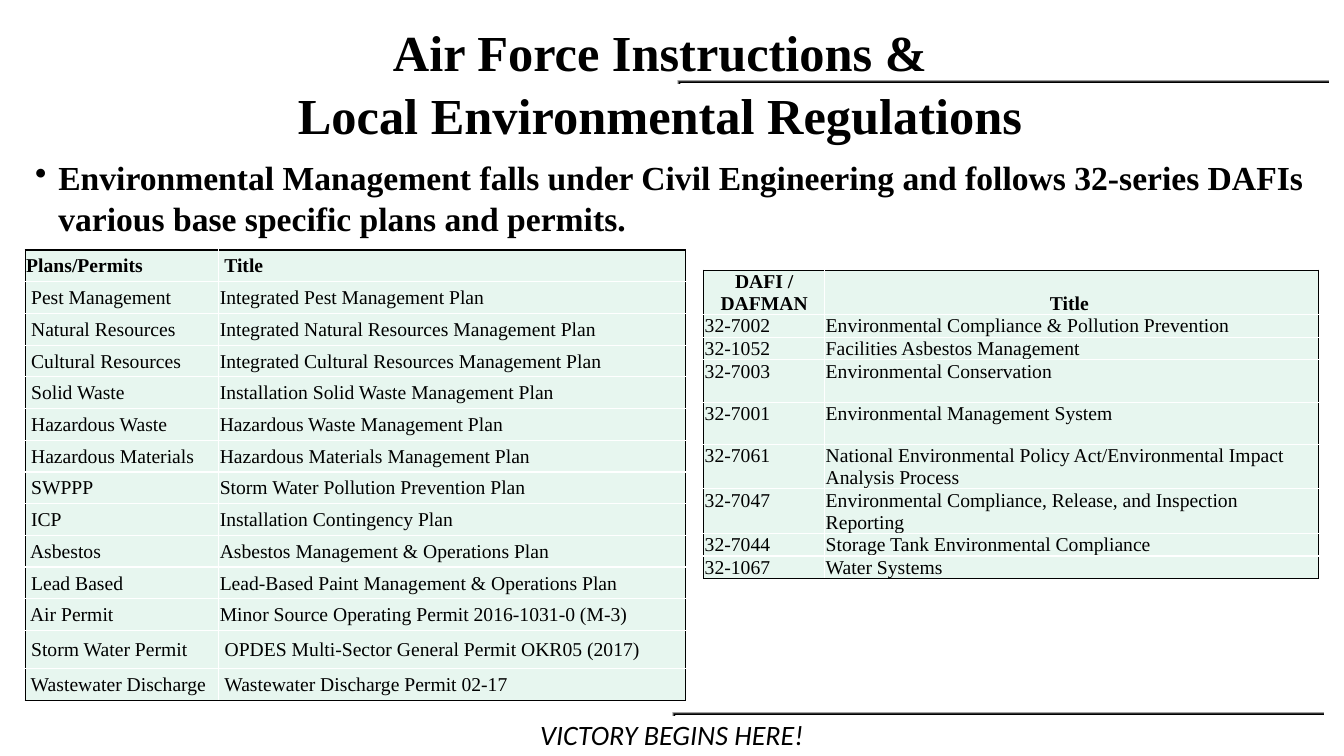
"""Build the slide on Air Force instructions and local environmental regulations."""
import dataclasses

import lxml.etree
import pptx
import pptx.dml.color
import pptx.enum.shapes
import pptx.enum.text
import pptx.oxml
import pptx.oxml.ns
import pptx.util

Inches = pptx.util.Inches
Align = pptx.enum.text.PP_ALIGN
Anchor = pptx.enum.text.MSO_ANCHOR
qn = pptx.oxml.ns.qn


@dataclasses.dataclass(frozen=True)
class Theme:
    """Colours, fonts and type sizes."""
    ink: str = "000000"
    paper: str = "FFFFFF"
    mint: str = "E7F6EF"
    serif: str = "Times New Roman"
    sans: str = "Calibri"
    title_size: int = 36
    body_size: int = 24
    footer_size: int = 20
    table_size: int = 14


class SlideBuilder:
    """Draws styled elements on the current slide."""

    def __init__(self, presentation, theme):
        """Add a title-only slide to the presentation."""
        self.theme = theme
        self.slide = presentation.slides.add_slide(presentation.slide_layouts[5])
        self.shapes = self.slide.shapes

    def format_font(self, paragraph, size, name=None, bold=False, italic=False):
        """Set the font of a whole paragraph."""
        font = paragraph.font
        font.size = pptx.util.Pt(size)
        font.name = name or self.theme.serif
        font.bold = bold
        font.italic = italic
        font.color.rgb = pptx.dml.color.RGBColor.from_string(self.theme.ink)

    def place(self, shape, left, top, width, height):
        """Move and size a shape in inches."""
        shape.left, shape.top = Inches(left), Inches(top)
        shape.width, shape.height = Inches(width), Inches(height)

    def title(self, lines, box):
        """Fill the title placeholder, one paragraph a line, above the rules."""
        title = self.shapes.title
        self.place(title, *box)
        frame = title.text_frame
        frame.text = "\n".join(lines)
        frame.auto_size = pptx.enum.text.MSO_AUTO_SIZE.NONE
        frame.vertical_anchor = Anchor.TOP
        frame.margin_top = Inches(0.09)
        for paragraph in frame.paragraphs:
            paragraph.alignment = Align.CENTER
            self.format_font(paragraph, self.theme.title_size, bold=True)
        frame.paragraphs[-1].space_before = pptx.util.Pt(2)
        self.shapes._spTree.append(title._element)

    def text_box(self, text, box):
        """Add a wrapping text box and return its frame and paragraph."""
        frame = self.shapes.add_textbox(*map(Inches, box)).text_frame
        frame.word_wrap = True
        frame.text = text
        return frame, frame.paragraphs[0]

    def bullet(self, text, box):
        """Add a bold bulleted statement."""
        frame, paragraph = self.text_box(text, box)
        frame.margin_top = Inches(0.09)
        properties = paragraph._p.get_or_add_pPr()
        properties.set("marL", str(Inches(0.23)))
        properties.set("indent", str(-Inches(0.23)))
        lxml.etree.SubElement(properties, qn("a:buChar")).set("char", "•")
        self.format_font(paragraph, self.theme.body_size, bold=True)

    def footer(self, text, box):
        """Add the centred italic motto."""
        paragraph = self.text_box(text, box)[1]
        paragraph.alignment = Align.CENTER
        self.format_font(paragraph, self.theme.footer_size, self.theme.sans, italic=True)

    def rule(self, left, top):
        """Add a thin bar that fades out by a corner gradient."""
        theme = self.theme
        bar = self.shapes.add_shape(
            pptx.enum.shapes.MSO_SHAPE.RECTANGLE,
            Inches(left), Inches(top), Inches(12.93), Inches(0.08))
        bar.shadow.inherit = False
        bar.line.fill.background()
        stops = "".join(
            f'<a:gs pos="{percent * 1000}"><a:srgbClr val="{color}"/></a:gs>'
            for percent, color in ((9, theme.paper), (19, theme.ink),
                                   (41, theme.ink), (100, theme.paper)))
        gradient = pptx.oxml.parse_xml(
            f'<a:gradFill {pptx.oxml.ns.nsdecls("a")} rotWithShape="0">'
            f'<a:gsLst>{stops}</a:gsLst><a:path path="rect">'
            '<a:fillToRect l="100000" t="100000"/></a:path></a:gradFill>')
        properties = bar._element.spPr
        properties.insert(2, gradient)
        properties.find(qn("a:xfrm")).set("flipV", "1")

    def border(self, cell, outer_sides):
        """Draw black borders on outer sides and white ones elsewhere."""
        properties = cell._tc.get_or_add_tcPr()
        for side in "LRTB":
            color = self.theme.ink if side in outer_sides else self.theme.paper
            properties.append(pptx.oxml.parse_xml(
                f'<a:ln{side} {pptx.oxml.ns.nsdecls("a")} w="{pptx.util.Pt(1)}">'
                f'<a:solidFill><a:srgbClr val="{color}"/></a:solidFill></a:ln{side}>'))

    def table(self, rows, box, widths, heights, header_align, header_anchor, anchor):
        """Add a two-column table with a bold header row."""
        graphic = self.shapes.add_table(len(rows), len(widths), *map(Inches, box))
        table = graphic.table
        table.horz_banding = False
        for column, width in zip(table.columns, widths):
            column.width = Inches(width)
        for row, height in zip(table.rows, heights):
            row.height = Inches(height)
        self.place(graphic, *box)
        last_row, last_column = len(rows) - 1, len(widths) - 1
        for i, values in enumerate(rows):
            for j, value in enumerate(values):
                cell = table.cell(i, j)
                cell.text = value
                cell.margin_left = cell.margin_right = cell.margin_top = Inches(0.01)
                cell.margin_bottom = 0
                cell.vertical_anchor = anchor if i else header_anchor
                edges = {"L": j == 0, "R": j == last_column,
                         "T": i == 0, "B": i == last_row}
                self.border(cell, [side for side, outer in edges.items() if outer])
                cell.fill.solid()
                cell.fill.fore_color.rgb = pptx.dml.color.RGBColor.from_string(self.theme.mint)
                paragraph = cell.text_frame.paragraphs[0]
                paragraph.alignment = Align.LEFT if i else header_align
                self.format_font(paragraph, self.theme.table_size, bold=i == 0)


PLANS = [
    ("Plans/Permits", " Title"),
    (" Pest Management", "Integrated Pest Management Plan"),
    (" Natural Resources", "Integrated Natural Resources Management Plan"),
    (" Cultural Resources", "Integrated Cultural Resources Management Plan"),
    (" Solid Waste", "Installation Solid Waste Management Plan"),
    (" Hazardous Waste", "Hazardous Waste Management Plan"),
    (" Hazardous Materials", "Hazardous Materials Management Plan"),
    (" SWPPP", "Storm Water Pollution Prevention Plan"),
    (" ICP", "Installation Contingency Plan"),
    (" Asbestos", "Asbestos Management & Operations Plan"),
    (" Lead Based", "Lead-Based Paint Management & Operations Plan"),
    (" Air Permit", "Minor Source Operating Permit 2016-1031-0 (M-3)"),
    (" Storm Water Permit", " OPDES Multi-Sector General Permit OKR05 (2017)"),
    (" Wastewater Discharge", " Wastewater Discharge Permit 02-17"),
]
INSTRUCTIONS = [
    ("DAFI / DAFMAN", "Title "),
    ("32-7002", "Environmental Compliance & Pollution Prevention"),
    ("32-1052", "Facilities Asbestos Management"),
    ("32-7003", "Environmental Conservation"),
    ("32-7001", "Environmental Management System"),
    ("32-7061", "National Environmental Policy Act/Environmental Impact Analysis Process"),
    ("32-7047", "Environmental Compliance, Release, and Inspection Reporting"),
    ("32-7044", "Storage Tank Environmental Compliance"),
    ("32-1067", "Water Systems"),
]


def main():
    """Assemble and save the slide."""
    presentation = pptx.Presentation()
    presentation.slide_width, presentation.slide_height = Inches(13.33), Inches(7.5)
    builder = SlideBuilder(presentation, Theme())
    builder.footer("VICTORY BEGINS HERE!", (3.81, 7.07, 5.71, 0.43))
    builder.rule(0.25, 0.75)
    builder.rule(0.2, 7.02)
    builder.bullet("Environmental Management falls under Civil Engineering and follows "
                   "32-series DAFIs various base specific plans and permits.",
                   (0.25, 1.47, 12.85, 1.3))
    builder.title(["Air Force Instructions & ", "Local Environmental Regulations "],
                  (0.1, 0.12, 13.02, 1.25))
    plan_height = (4.47 - 0.38) / 13
    builder.table(PLANS, (0.25, 2.48, 6.55, 4.47), (1.92, 4.63),
                  [plan_height] * 12 + [0.38, plan_height],
                  Align.LEFT, Anchor.MIDDLE, Anchor.MIDDLE)
    builder.table(INSTRUCTIONS, (6.98, 2.68, 6.1, 3.24), (1.2, 4.9),
                  (0.21, 0.21, 0.21, 0.42, 0.42, 0.21, 0.42, 0.21, 0.21),
                  Align.CENTER, Anchor.BOTTOM, Anchor.TOP)
    presentation.save("out.pptx")


if __name__ == "__main__":
    main()
